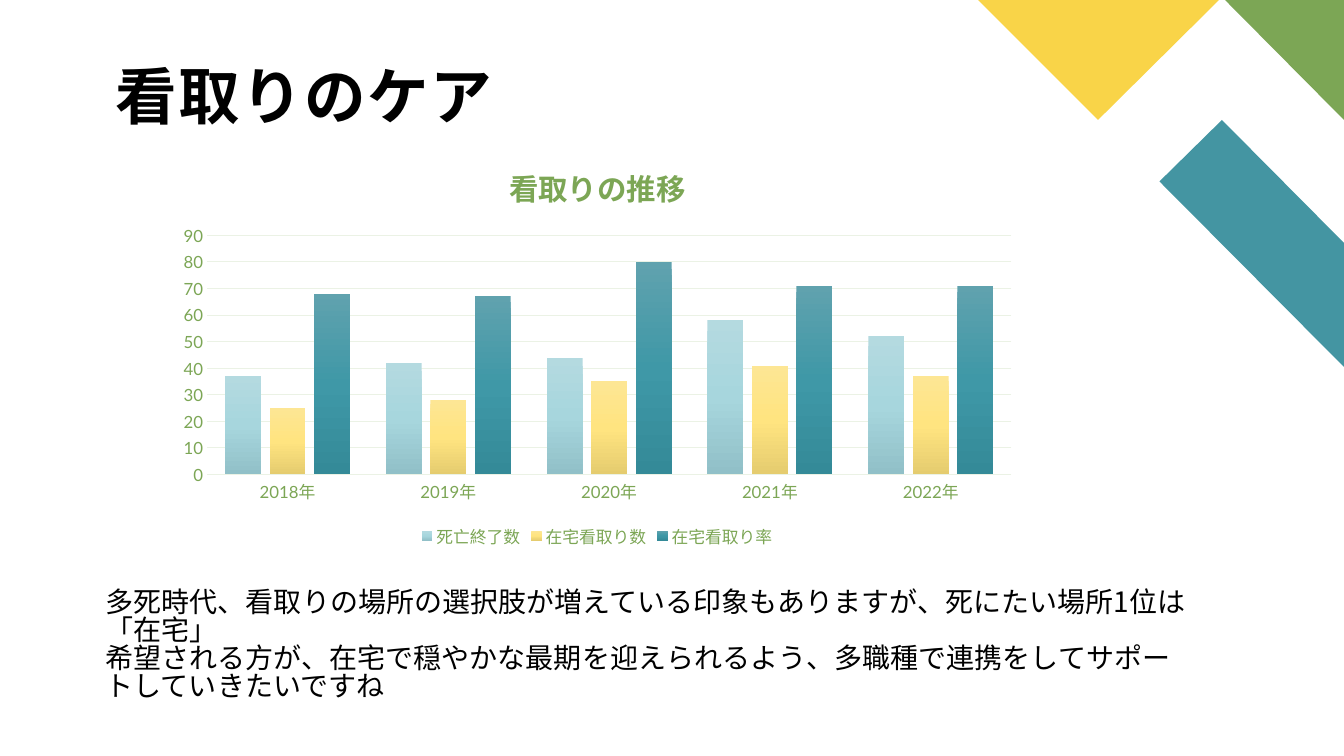
from pptx import Presentation
from pptx.chart.data import CategoryChartData
from pptx.dml.color import RGBColor
from pptx.enum.chart import XL_CHART_TYPE, XL_LEGEND_POSITION, XL_TICK_MARK
from pptx.enum.text import MSO_ANCHOR
from pptx.oxml import parse_xml
from pptx.oxml.ns import nsdecls
from pptx.util import Inches, Pt

COLUMN = XL_CHART_TYPE.COLUMN_CLUSTERED
BELOW = XL_LEGEND_POSITION.BOTTOM
NO_TICK = XL_TICK_MARK.NONE
TOP, BOTTOM = MSO_ANCHOR.TOP, MSO_ANCHOR.BOTTOM

BLACK, GREEN, PALE = "000000", "7CA655", "EBF2E5"
YELLOW, TEAL = "F9D448", "4495A2"


def color(code):
    return RGBColor.from_string(code)


class Deck:
    latin = "Lato"
    kana = "Noto Sans CJK JP"

    def __init__(self):
        self.file = Presentation()
        self.file.slide_width = Inches(13.33)
        self.file.slide_height = Inches(7.5)
        self.slide = self.file.slides.add_slide(self.file.slide_layouts[6])

    def outline(self, points, fill):
        start, *rest = [(Inches(x), Inches(y)) for x, y in points]
        pen = self.slide.shapes.build_freeform(*start)
        pen.add_line_segments(rest, close=True)
        shape = pen.convert_to_shape()
        shape.shadow.inherit = False
        shape.fill.solid()
        shape.fill.fore_color.rgb = color(fill)
        shape.line.fill.background()

    def font(self, font, size, code, name, bold=False):
        font.name, font.size, font.bold = name, Pt(size), bold
        font.color.rgb = color(code)

    def run(self, para, text, size, code, bold=False, gap=0):
        run = para.add_run()
        run.text = text
        self.font(run.font, size, code, self.kana, bold)
        props = run._r.get_or_add_rPr()
        props.append(parse_xml(f'<a:ea {nsdecls("a")} typeface="{self.kana}"/>'))
        if gap:
            props.set("spc", str(gap * 100))

    def text(self, box, lines, size, anchor=TOP, inset=(0.1, 0.05),
             pitch=0.83, bold=False, gap=0):
        frame = self.slide.shapes.add_textbox(*map(Inches, box)).text_frame
        frame.word_wrap = True
        frame.vertical_anchor = anchor
        frame.margin_left = frame.margin_right = Inches(inset[0])
        frame.margin_top = frame.margin_bottom = Inches(inset[1])
        for i, line in enumerate(lines):
            para = frame.add_paragraph() if i else frame.paragraphs[0]
            para.line_spacing = pitch
            self.run(para, line, size, BLACK, bold, gap)

    def shade(self, series, codes):
        stops = "".join(
            f'<a:gs pos="{i * 50000}"><a:srgbClr val="{code}"/></a:gs>'
            for i, code in enumerate(codes))
        series._element.get_or_add_spPr().insert(0, parse_xml(
            f'<a:gradFill {nsdecls("a")} rotWithShape="1"><a:gsLst>{stops}'
            '</a:gsLst><a:lin ang="5400000" scaled="0"/></a:gradFill>'))

    def rule(self, line):
        line.color.rgb = color(PALE)
        line.width = Pt(0.75)

    def chart(self, box, title, cats, rows):
        data = CategoryChartData()
        data.categories = cats
        for name, vals, _ in rows:
            data.add_series(name, vals)
        chart = self.slide.shapes.add_chart(
            COLUMN, *map(Inches, box), data).chart
        self.font(chart.font, 12, GREEN, self.latin)
        chart.has_title = True
        self.run(chart.chart_title.text_frame.paragraphs[0],
                 title, 21, GREEN, bold=True)
        chart.chart_title.include_in_layout = False
        chart.has_legend = True
        chart.legend.position = BELOW
        chart.legend.include_in_layout = False
        self.font(chart.legend.font, 12, GREEN, self.latin)

        plot = chart.plots[0]
        plot.gap_width, plot.overlap = 100, -24
        plot.vary_by_categories = False
        for series, (_, _, codes) in zip(plot.series, rows):
            self.shade(series, codes)

        for axis in (chart.category_axis, chart.value_axis):
            axis.major_tick_mark = axis.minor_tick_mark = NO_TICK
            self.font(axis.tick_labels.font, 12, GREEN, self.latin)
        self.rule(chart.category_axis.format.line)
        scale = chart.value_axis
        scale.minimum_scale, scale.maximum_scale, scale.major_unit = 0, 90, 10
        scale.format.line.fill.background()
        scale.has_major_gridlines = True
        self.rule(scale.major_gridlines.format.line)


def main():
    deck = Deck()
    deck.outline([(13.33, 3.64), (13.33, 2.41), (12.12, 1.19), (11.5, 1.8)], TEAL)
    deck.outline([(13.33, 1.19), (13.33, 0), (12.15, 0)], GREEN)
    deck.outline([(9.7, 0), (10.89, 1.19), (12.09, 0)], YELLOW)
    deck.text((1.15, 0.65, 4.19, 0.67), ["看取りのケア"], 44,
              BOTTOM, (0, 0), 0.9, True, 1)
    deck.chart(
        (1.65, 1.43, 8.55, 4.05), "看取りの推移",
        [f"{year}年" for year in range(2018, 2023)],
        [("死亡終了数", (37, 42, 44, 58, 52), ("B4DAE0", "A7D6DD", "91C0C8")),
         ("在宅看取り数", (25, 28, 35, 41, 37), ("FDE694", "FFE480", "E5CC6F")),
         ("在宅看取り率", (68, 67, 80, 71, 71), ("60A2AE", "3F98A7", "348A98"))])
    deck.text(
        (0.95, 5.81, 10.96, 1.11),
        ["多死時代、看取りの場所の選択肢が増えている印象もありますが、死にたい場所1位は「在宅」",
         "希望される方が、在宅で穏やかな最期を迎えられるよう、多職種で連携をしてサポートしていきたいですね"],
        20)
    deck.file.save("out.pptx")


if __name__ == "__main__":
    main()
